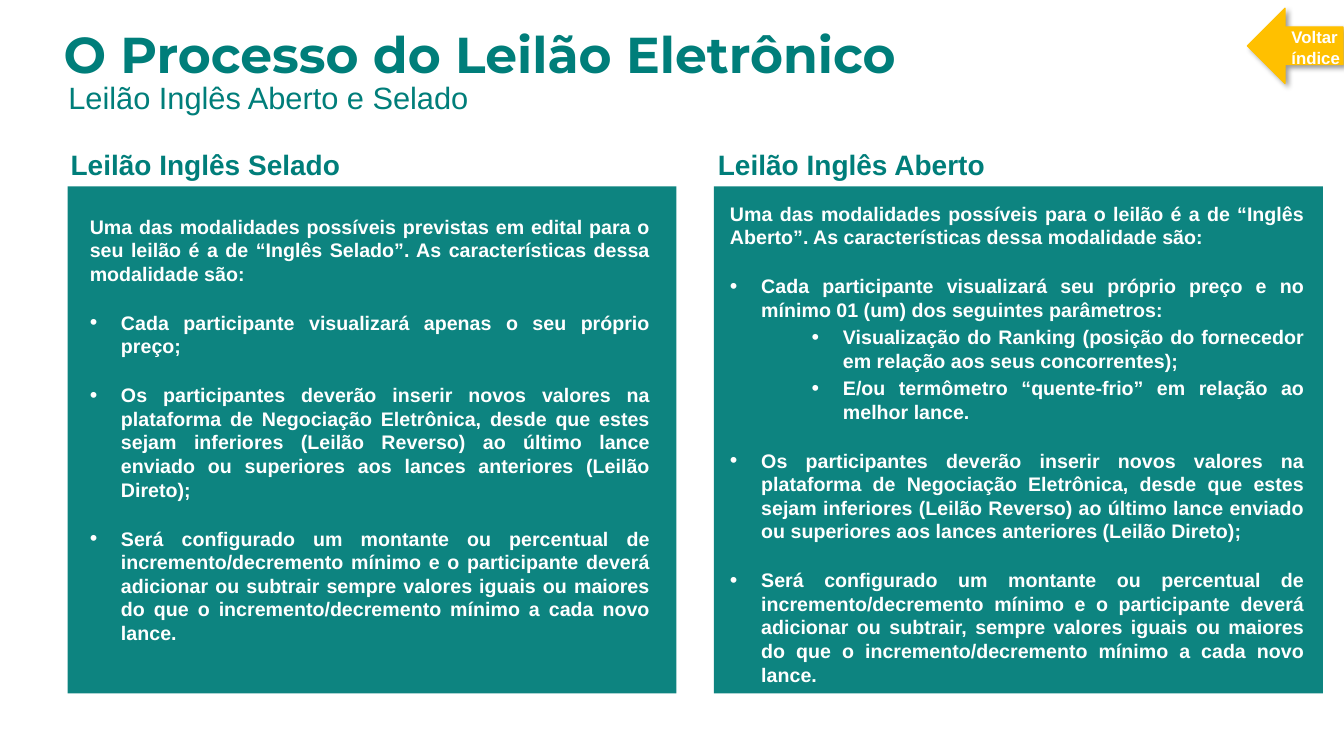
"""Builds the slide that compares sealed and open English auctions."""
from lxml.etree import SubElement
from pptx import Presentation
from pptx.dml.color import RGBColor
from pptx.enum.shapes import MSO_SHAPE
from pptx.enum.text import MSO_ANCHOR, MSO_AUTO_SIZE, PP_ALIGN
from pptx.oxml import parse_xml
from pptx.oxml.ns import nsdecls, qn
from pptx.util import Inches, Pt

TEAL = RGBColor(0x00, 0x7E, 0x7A)
AMBER = RGBColor(0xFF, 0xC0, 0x00)
WHITE = RGBColor(0xFF, 0xFF, 0xFF)

TITLE_FONT = {"name": "Montserrat", "size": Pt(36), "bold": True}
SUBTITLE_FONT = {"name": "Arial", "size": Pt(22), "bold": False}
HEADING_FONT = {"name": "Arial", "size": Pt(20), "bold": True}
BODY_FONT = {"name": "Arial", "size": Pt(14), "bold": True}
BUTTON_FONT = {"name": "Arial", "size": Pt(12), "bold": True}

PARTICIPANTS = (
    "Os participantes deverão inserir novos valores na plataforma de Negociação "
    "Eletrônica, desde que estes sejam inferiores (Leilão Reverso) ao último lance "
    "enviado ou superiores aos lances anteriores (Leilão Direto);"
)
INCREMENT = (
    "Será configurado um montante ou percentual de incremento/decremento mínimo e o "
    "participante deverá adicionar ou subtrair{} sempre valores iguais ou maiores do "
    "que o incremento/decremento mínimo a cada novo lance."
)
BULLET_INDENTS = [0.31, 1.12]

COLUMNS = [
    {
        "heading": "Leilão Inglês Selado",
        "heading_left": 0.7,
        "panel_left": 0.67,
        "body_box": (0.79, 1.98, 5.76, 4.8),
        "body_format": {"vertical_anchor": MSO_ANCHOR.MIDDLE, "margin_bottom": Inches(0.29)},
        "intro": "Uma das modalidades possíveis previstas em edital para o seu leilão "
                 "é a de “Inglês Selado”. As características dessa modalidade são:",
        "bullets": [
            (0, "Cada participante visualizará apenas o seu próprio preço;"),
            (0, PARTICIPANTS),
            (0, INCREMENT.format("")),
        ],
    },
    {
        "heading": "Leilão Inglês Aberto",
        "heading_left": 7.12,
        "panel_left": 7.08,
        "body_box": (7.14, 1.95, 5.9, 4.83),
        "body_format": {"vertical_anchor": MSO_ANCHOR.TOP},
        "intro": "Uma das modalidades possíveis para o leilão é a de “Inglês Aberto”. "
                 "As características dessa modalidade são:",
        "bullets": [
            (0, "Cada participante visualizará seu próprio preço e no mínimo 01 (um) "
                "dos seguintes parâmetros:"),
            (1, "Visualização do Ranking (posição do fornecedor em relação aos seus "
                "concorrentes);"),
            (1, "E/ou termômetro “quente-frio” em relação ao melhor lance."),
            (0, PARTICIPANTS),
            (0, INCREMENT.format(",")),
        ],
    },
]


def place(shape, left, top, width, height):
    box = {"left": left, "top": top, "width": width, "height": height}
    for name, value in box.items():
        setattr(shape, name, Inches(value))


def write(paragraph, text, font_format, color, alignment=PP_ALIGN.LEFT):
    paragraph.alignment = alignment
    paragraph.space_before = Pt(0)
    run = paragraph.add_run()
    run.text = text
    for name, value in font_format.items():
        setattr(run.font, name, value)
    run.font.color.rgb = color


presentation = Presentation()
presentation.slide_width = Inches(13.33)
presentation.slide_height = Inches(7.5)
slide = presentation.slides.add_slide(presentation.slide_layouts.get_by_name("Comparison"))
shapes = slide.shapes
placeholders = list(slide.placeholders)

title = shapes.title
place(title, 0.63, 0.13, 12.06, 0.79)
write(title.text_frame.paragraphs[0], "O Processo do Leilão Eletrônico", TITLE_FONT, TEAL)

subtitle = shapes.add_textbox(Inches(0.58), Inches(0.73), Inches(12.49), Inches(0.47))
subtitle.text_frame.word_wrap = True
write(subtitle.text_frame.paragraphs[0], "Leilão Inglês Aberto e Selado", SUBTITLE_FONT, TEAL)

for number, column in enumerate(COLUMNS):
    heading, body = placeholders[1 + 2 * number:3 + 2 * number]

    panel = shapes.add_shape(
        MSO_SHAPE.RECTANGLE, Inches(column["panel_left"]), Inches(1.85), Inches(6.04), Inches(5.03)
    )
    panel.shadow.inherit = False
    panel.fill.solid()
    panel.fill.fore_color.rgb = TEAL
    panel.line.fill.background()
    panel_color = panel._element.spPr.find(qn("a:solidFill")).find(qn("a:srgbClr"))
    SubElement(panel_color, qn("a:alpha"), val="95000")
    shapes._spTree.insert(2, panel._element)

    place(heading, column["heading_left"], 1.42, 6, 0.38)
    heading.text_frame.vertical_anchor = MSO_ANCHOR.BOTTOM
    write(heading.text_frame.paragraphs[0], column["heading"], HEADING_FONT, TEAL)

    place(body, *column["body_box"])
    body_frame = body.text_frame
    body_frame.auto_size = MSO_AUTO_SIZE.NONE
    for name, value in column["body_format"].items():
        setattr(body_frame, name, value)
    intro = body_frame.paragraphs[0]
    intro_properties = intro._p.get_or_add_pPr()
    intro_properties.set("marL", "0")
    intro_properties.set("indent", "0")
    SubElement(intro_properties, qn("a:buNone"))
    write(intro, column["intro"], BODY_FONT, WHITE, PP_ALIGN.JUSTIFY)

    for level, text in column["bullets"]:
        bullet = body_frame.add_paragraph()
        bullet.level = level
        properties = bullet._p.get_or_add_pPr()
        properties.set("marL", str(Inches(BULLET_INDENTS[level])))
        properties.set("indent", str(Inches(-0.31)))
        SubElement(properties, qn("a:buSzPct"), val="110000")
        SubElement(properties, qn("a:buFont"), typeface="Arial")
        SubElement(properties, qn("a:buChar"), char="•")
        write(bullet, text, BODY_FONT, WHITE, PP_ALIGN.JUSTIFY)
        bullet.space_before = Pt(2.8 if level else 18.2)

for frame in (title.text_frame, placeholders[1].text_frame, placeholders[3].text_frame):
    frame.auto_size = MSO_AUTO_SIZE.NONE
    for side in ("left", "top", "right", "bottom"):
        setattr(frame, f"margin_{side}", 0)
title.text_frame.vertical_anchor = MSO_ANCHOR.MIDDLE

arrow = shapes.add_shape(
    MSO_SHAPE.LEFT_ARROW, Inches(12.37), Inches(0.08), Inches(0.95), Inches(0.75)
)
arrow.fill.solid()
arrow.fill.fore_color.rgb = AMBER
arrow.line.color.rgb = AMBER
arrow.line.width = Pt(0.75)
arrow._element.spPr.append(parse_xml(
    f'<a:effectLst {nsdecls("a")}>'
    f'<a:outerShdw blurRad="{Pt(4)}" dist="{Pt(3)}" dir="2700000" algn="tl" rotWithShape="0">'
    '<a:srgbClr val="000000"><a:alpha val="40000"/></a:srgbClr>'
    '</a:outerShdw></a:effectLst>'
))

button = shapes.add_textbox(Inches(12.71), Inches(0.22), Inches(0.69), Inches(0.5))
button.text_frame.word_wrap = True
write(button.text_frame.paragraphs[0], "Voltar índice", BUTTON_FONT, WHITE)

presentation.save("out.pptx")
